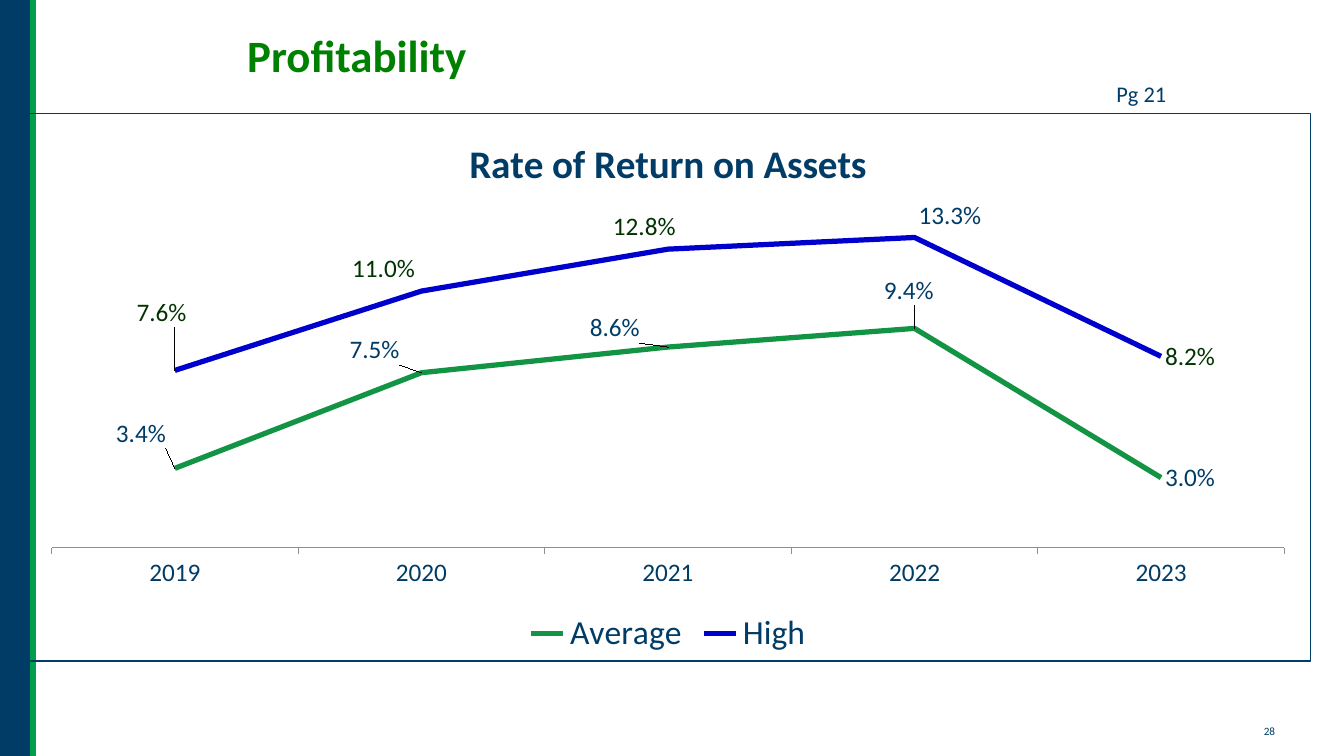
from lxml import etree
from pptx import Presentation
from pptx import util as u
from pptx.chart import data as chart_data
from pptx.dml.color import RGBColor
from pptx.enum import chart as chart_enum, shapes, text
from pptx.oxml import parse_xml
from pptx.oxml.ns import nsdecls, qn

COLORS = {"navy": "003C66", "stripe": "009F4D", "title": "008000", "axis": "8C9196",
          "average": "139445", "high": "0000CC", "high_label": "003300"}
FONT = "Calibri"


def style_font(font, size, color, bold=False):
    font.name = FONT
    font.size = u.Pt(size)
    font.bold = bold
    font.color.rgb = RGBColor.from_string(COLORS[color])


def add_label(page, words, left, top, width, height, size, color, align, bold=False, wrap=True):
    box = page.shapes.add_textbox(u.Cm(left), u.Cm(top), u.Cm(width), u.Cm(height))
    box.text_frame.word_wrap = wrap
    box.text_frame.vertical_anchor = text.MSO_ANCHOR.MIDDLE
    para = box.text_frame.paragraphs[0]
    para.alignment = align
    span = para.add_run()
    span.text = words
    style_font(span.font, size, color, bold)


deck = Presentation()
deck.slide_width, deck.slide_height = u.Cm(33.87), u.Cm(19.05)
page = deck.slides.add_slide(deck.slide_layouts[6])

# Side band and stripe
band = page.shapes.add_shape(shapes.MSO_SHAPE.RECTANGLE, 0, 0, u.Cm(0.84), deck.slide_height)
band.shadow.inherit = False
band.fill.solid()
band.fill.fore_color.rgb = RGBColor.from_string(COLORS["navy"])
band.line.fill.background()
stripe = page.shapes.add_connector(shapes.MSO_CONNECTOR.STRAIGHT,
                                   u.Cm(0.84), 0, u.Cm(0.84), deck.slide_height)
stripe.line.color.rgb = RGBColor.from_string(COLORS["stripe"])
stripe.line.width = u.Pt(4.5)
etree.SubElement(stripe._element.spPr, qn("a:effectLst"))

# Line chart
returns = chart_data.CategoryChartData(number_format="0.0%")
returns.categories = ["2019", "2020", "2021", "2022", "2023"]
for name, percents in (("Average", (3.4, 7.5, 8.6, 9.4, 3.0)),
                       ("High", (7.6, 11.0, 12.8, 13.3, 8.2))):
    returns.add_series(name, [round(percent / 100, 3) for percent in percents])
chart = page.shapes.add_chart(chart_enum.XL_CHART_TYPE.LINE, u.Cm(0.64), u.Cm(2.85),
                              u.Cm(32.39), u.Cm(13.82), returns).chart
style_font(chart.font, 18, "navy")
chart._chartSpace.find(qn("c:chart")).addnext(parse_xml(
    f'<c:spPr {nsdecls("c", "a")}><a:noFill/><a:ln w="9525"><a:solidFill>'
    f'<a:srgbClr val="{COLORS["navy"]}"/></a:solidFill></a:ln></c:spPr>'))

# Chart title and legend
chart.has_title = True
span = chart.chart_title.text_frame.paragraphs[0].add_run()
span.text = "Rate of Return on Assets"
style_font(span.font, 28, "navy", bold=True)
chart.chart_title.include_in_layout = False
chart.has_legend = True
chart.legend.position = chart_enum.XL_LEGEND_POSITION.BOTTOM
chart.legend.include_in_layout = False
style_font(chart.legend.font, 24, "navy")

# Axes and plot area
years = chart.category_axis
years.major_tick_mark = chart_enum.XL_TICK_MARK.OUTSIDE
years.format.line.color.rgb = RGBColor.from_string(COLORS["axis"])
style_font(years.tick_labels.font, 18, "navy")
rates = chart.value_axis
rates.minimum_scale, rates.maximum_scale, rates.major_unit = 0, 0.15, 0.05
rates.has_major_gridlines = False
rates.tick_labels.number_format = "0.0%"
rates.tick_labels.number_format_is_linked = False
rates.visible = False
plot_area = chart._chartSpace.find(".//" + qn("c:plotArea"))
for old_layout in plot_area.findall(qn("c:layout")):
    plot_area.remove(old_layout)
plot_area.insert(0, parse_xml(
    f'<c:layout {nsdecls("c")}><c:manualLayout><c:layoutTarget val="inner"/>'
    '<c:xMode val="edge"/><c:yMode val="edge"/><c:x val="0.02"/><c:y val="0.154"/>'
    '<c:w val="0.96"/><c:h val="0.639"/></c:manualLayout></c:layout>'))

# Series, with label shifts in percent of the chart's width and height
chart.plots[0].vary_by_categories = False
series_styles = (
    ("average", ["navy"] * 5, [(-4.9, -6.4), (-5.9, -4.2), (-6.4, -3.5), (-2.7, -6.9)]),
    ("high", ["high_label"] * 3 + ["navy", "high_label"],
     [(-3.3, -10.6), (-5.7, -4.2), (-4.6, -4.2), (0, -4)]),
)
for series, (color, label_colors, shifts) in zip(chart.plots[0].series, series_styles):
    series.smooth = False
    series.marker.style = chart_enum.XL_MARKER_STYLE.NONE
    series.format.line.color.rgb = RGBColor.from_string(COLORS[color])
    series.format.line.width = u.Pt(3.75)
    labels = series.data_labels
    labels.show_value = True
    labels.number_format = "0.0%"
    labels.number_format_is_linked = False
    labels.position = chart_enum.XL_LABEL_POSITION.RIGHT
    style_font(labels.font, 18, label_colors[-1])
    for index, (across, down) in enumerate(shifts):
        label = series.points[index].data_label
        style_font(label.font, 18, label_colors[index])
        label.position = chart_enum.XL_LABEL_POSITION.RIGHT
        label._dLbl.find(qn("c:idx")).addnext(parse_xml(
            f'<c:layout {nsdecls("c")}><c:manualLayout><c:x val="{across / 100:.3f}"/>'
            f'<c:y val="{down / 100:.3f}"/></c:manualLayout></c:layout>'))

# Heading, page reference and slide number
add_label(page, "Profitability", 4.65, 0.1, 8.69, 2.54, 32, "title", text.PP_ALIGN.CENTER, bold=True)
add_label(page, "Pg 21", 26.67, 1.9, 2.97, 0.94, 16, "navy", text.PP_ALIGN.RIGHT)
add_label(page, "28", 31.6, 18.11, 0.86, 0.61, 8, "navy", text.PP_ALIGN.LEFT, wrap=False)

deck.save("out.pptx")
